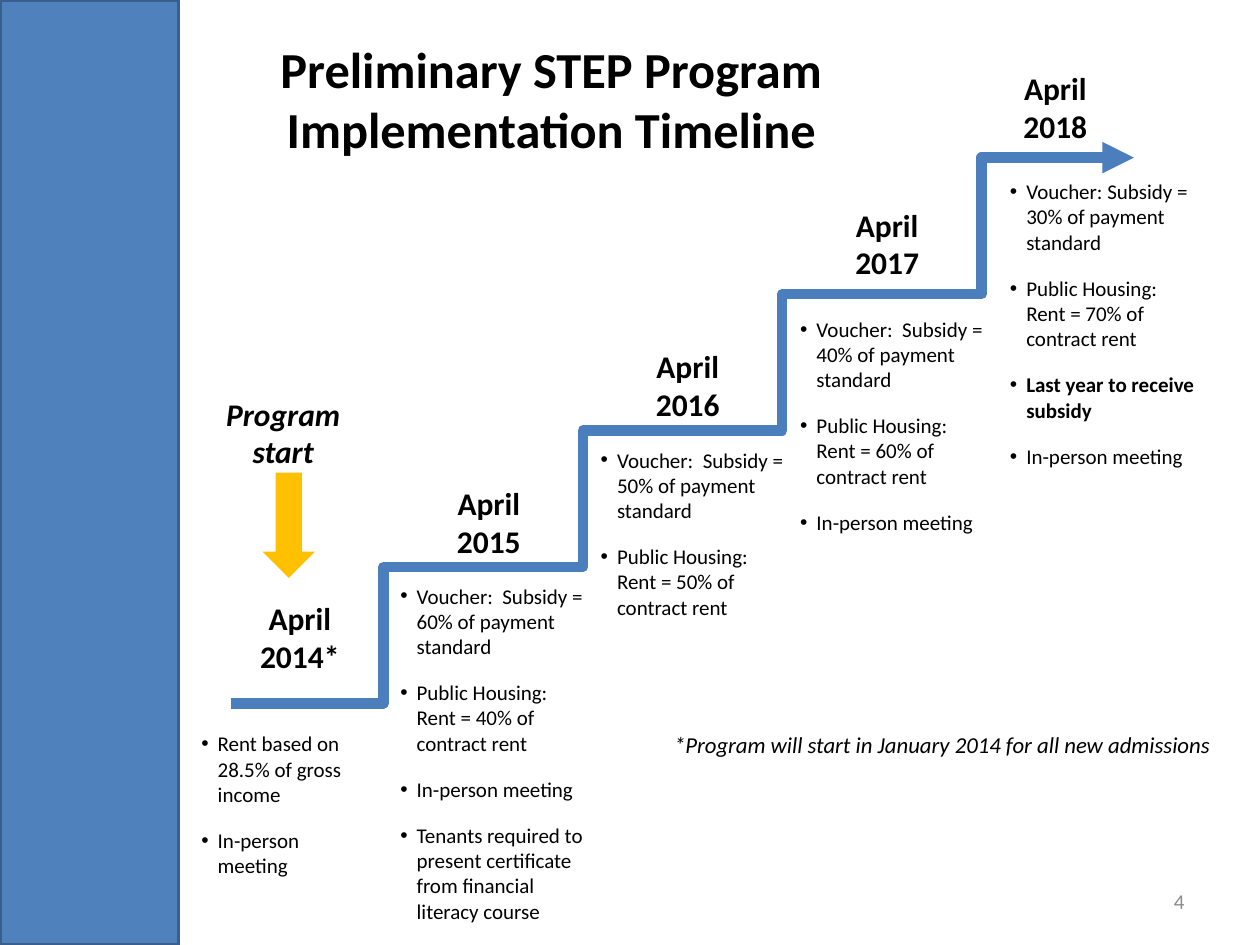
from pptx import Presentation
from pptx.dml.color import RGBColor
from pptx.enum.shapes import MSO_CONNECTOR as Link, MSO_SHAPE as Kind
from pptx.enum.text import MSO_ANCHOR as Anchor, PP_ALIGN as Align
from pptx.oxml.ns import qn
from pptx.util import Cm, Pt
from lxml.etree import SubElement as sub

FONT = "Calibri"
MEET = "In-person meeting"
LAST = "Last year to receive subsidy"


def color(code):
    return RGBColor.from_string(code)


def write(frame, *lines, size=18, tint="000000", bold=False, ital=False,
          align=None, anchor=Anchor.TOP, bullet=False, strong=()):
    frame.word_wrap = True
    frame.vertical_anchor = anchor
    for n, line in enumerate(lines):
        para = frame.add_paragraph() if n else frame.paragraphs[0]
        para.alignment = align
        run = para.add_run()
        run.text = line
        font = run.font
        font.name, font.size = FONT, Pt(size)
        font.bold, font.italic = bold or line in strong, ital
        font.color.rgb = color(tint)
        if bullet:
            mark(para)


def mark(para):
    """Give a paragraph a hanging bullet and space above."""
    para.space_before = Pt(12)
    props = para._p.get_or_add_pPr()
    props.set("marL", str(Cm(0.33)))
    props.set("indent", str(-Cm(0.33)))
    sub(props, qn("a:buFont")).set("typeface", "Arial")
    sub(props, qn("a:buChar")).set("char", "•")


def text(slide, box, *lines, **form):
    shape = slide.shapes.add_textbox(*map(Cm, box))
    write(shape.text_frame, *lines, **form)


def block(slide, kind, box, fill, edge=None):
    shape = slide.shapes.add_shape(kind, *map(Cm, box))
    shape.shadow.inherit = False
    shape.fill.solid()
    shape.fill.fore_color.rgb = color(fill)
    if edge:
        shape.line.color.rgb = color(edge)
        shape.line.width = Pt(2)
    else:
        shape.line.fill.background()


def stair(slide, n, arrow=False):
    """Draw the n-th step of the staircase, rising to the right."""
    left, low = 4.66 + 4.02 * n, 14.18 - 2.75 * n
    ends = left, low, left + 6.14, low - 2.75
    step = slide.shapes.add_connector(Link.ELBOW, *map(Cm, ends))
    step.line.color.rgb = color("4B7EBC")
    step.line.width = Pt(6)
    if arrow:
        sub(step.line._get_or_add_ln(), qn("a:tailEnd")).set("type", "triangle")
    sub(step._element.spPr, qn("a:effectLst"))


def terms(pay, rent, gap="  "):
    return [f"Voucher:{gap}Subsidy = {pay}% of payment standard",
            f"Public Housing:  Rent = {rent}% of contract rent"]


# Year, label corner, list box, list items
YEARS = [
    ("2014*", (4.88, 11.96), (3.81, 14.61, 3.81, 3.25),
     ["Rent based on 28.5% of gross income", MEET]),
    ("2015", (8.69, 9.63), (7.82, 11.63, 4.24, 7.2),
     terms(60, 40) + [MEET, "Tenants required to present certificate "
                      "from financial literacy course"]),
    ("2016", (12.7, 6.88), (11.86, 8.89, 4.24, 3.76), terms(50, 50)),
    ("2017", (16.72, 4.02), (15.88, 6.25, 4.24, 4.7), terms(40, 60) + [MEET]),
    ("2018", (20.11, 1.27), (20.11, 3.48, 4.24, 7.2),
     terms(30, 70, " ") + [LAST, MEET]),
]


def main():
    deck = Presentation()
    deck.slide_width, deck.slide_height = Cm(25.4), Cm(19.05)
    slide = deck.slides.add_slide(deck.slide_layouts[5])

    # Title and side band
    title = slide.shapes.title
    title.left, title.top, title.width, title.height = map(
        Cm, (3.81, 0.56, 14.61, 2.84))
    write(title.text_frame, "Preliminary STEP Program Implementation Timeline",
          size=28.8, bold=True, align=Align.CENTER, anchor=Anchor.MIDDLE)
    block(slide, Kind.RECTANGLE, (0, 0, 3.6, 19.05), "4F81BD", "3A5F8C")

    # Staircase
    for n in range(4):
        stair(slide, n, arrow=n == 3)

    # Years with their rules
    for year, spot, box, items in YEARS:
        text(slide, (*spot, 2.33, 1.8), f"April {year}",
             bold=True, align=Align.CENTER)
        text(slide, box, *items, size=12, bullet=True, strong=(LAST,))

    # Program start
    block(slide, Kind.DOWN_ARROW, (5.29, 9.53, 1.06, 2.12), "FFC000")
    text(slide, (4.23, 7.83, 2.96, 1.8), "Program start",
         bold=True, ital=True, align=Align.CENTER)

    # Footnote and page number
    text(slide, (13.34, 14.61, 11.43, 0.81),
         "*Program will start in January 2014 for all new admissions",
         size=13, ital=True)
    text(slide, (18.2, 17.66, 5.93, 1.01), "4", size=12, tint="8C8C8C",
         align=Align.RIGHT, anchor=Anchor.MIDDLE)

    deck.save("out.pptx")


if __name__ == "__main__":
    main()
